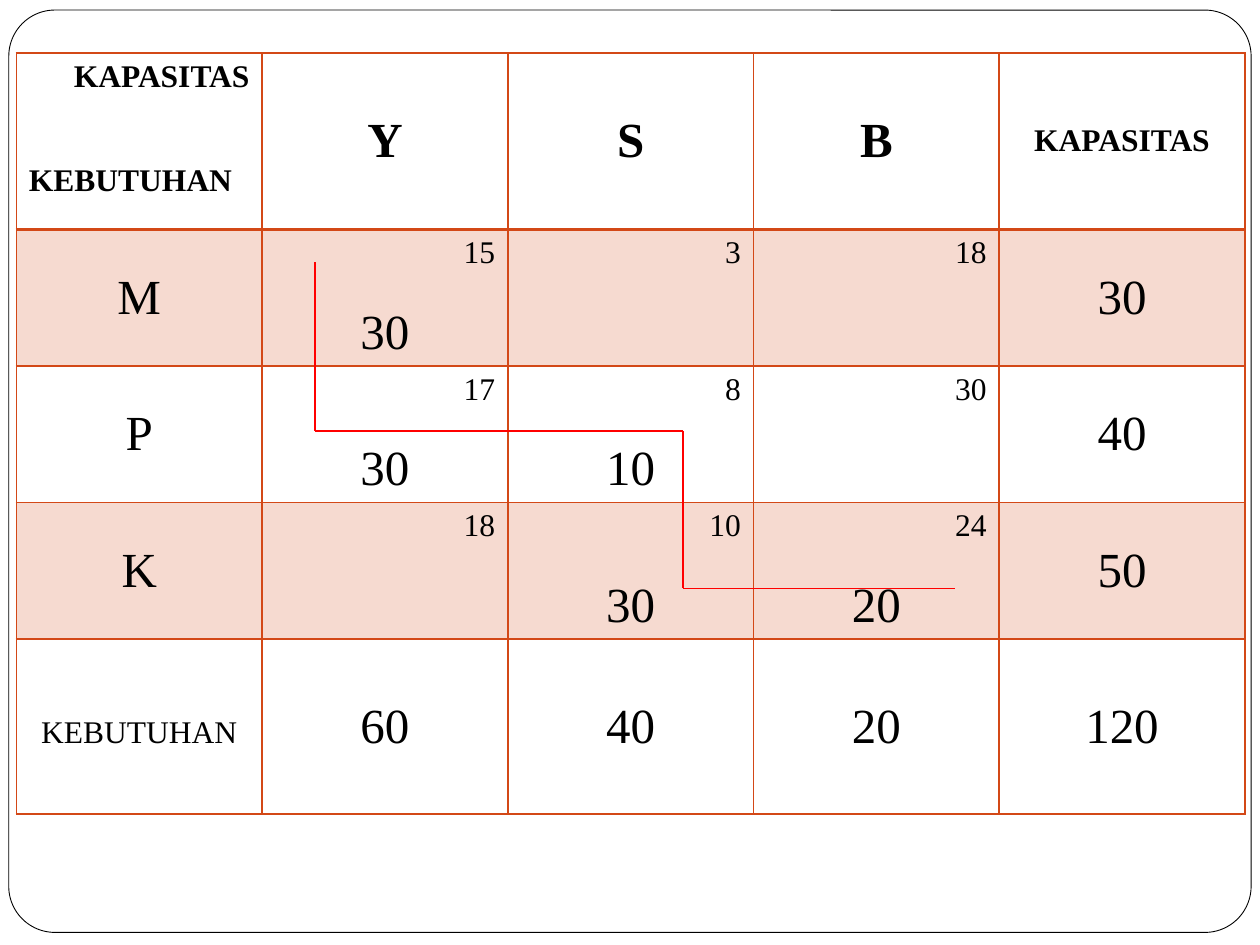
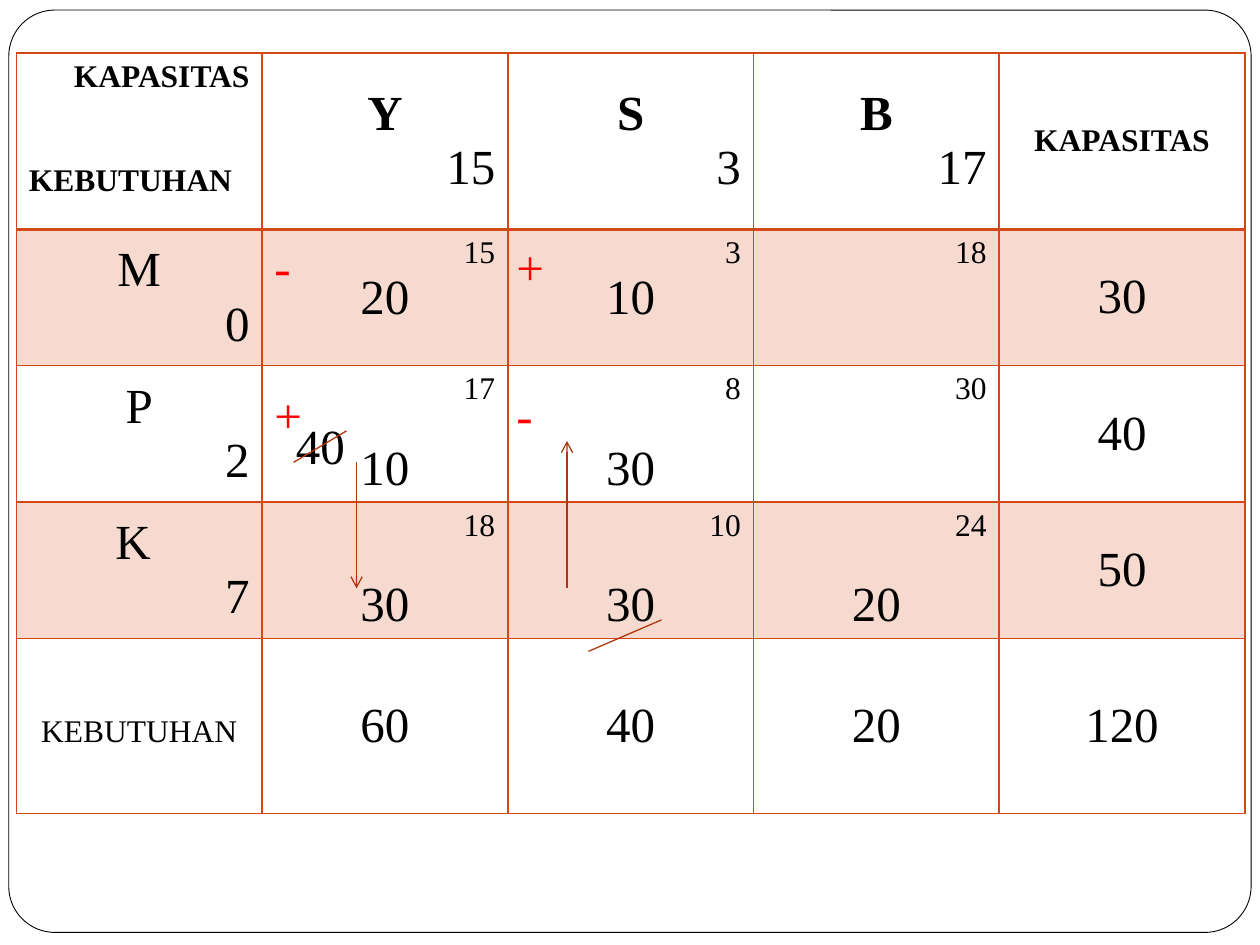
from lxml import etree
from pptx import Presentation
from pptx.dml.color import RGBColor
from pptx.enum.shapes import MSO_CONNECTOR, MSO_SHAPE
from pptx.enum.text import MSO_ANCHOR, MSO_AUTO_SIZE, PP_ALIGN
from pptx.oxml.ns import qn
from pptx.util import Inches, Pt

LEFT, CENTER, RIGHT = PP_ALIGN.LEFT, PP_ALIGN.CENTER, PP_ALIGN.RIGHT
TOP, MIDDLE = MSO_ANCHOR.TOP, MSO_ANCHOR.MIDDLE
STRAIGHT = MSO_CONNECTOR.STRAIGHT
FIT = MSO_AUTO_SIZE.SHAPE_TO_FIT_TEXT

FONT = "Times New Roman"
COLORS = {"text": "000000", "paper": "FFFFFF", "grid": "D34817",
          "path": "FF0000", "mark": "B1360B"}
SMALL, LARGE = 18, 28
LINE_GAP = 19.9  # height of one small text line, in points
COL_WIDTH = 1.95
ROW_HEIGHTS = [1.4, 1.08, 1.08, 1.08, 1.39]

SOURCES, TARGETS = "MPK", "YSB"
COSTS = [[15, 3, 18], [17, 8, 30], [18, 10, 24]]
CAPACITIES = [30, 40, 50]
DEMANDS = [60, 40, 20, 120]

# Each allocation maps (source row, target column) to its amount.
SLIDES = [
    {
        "amounts": {(0, 0): 30, (1, 0): 30, (1, 1): 10, (2, 1): 30, (2, 2): 20},
        "raised": [],
        "row_values": [],
        "col_values": [],
        "boxes": [],
        "lines": [
            (2.5, 2.08, 2.5, 3.42, "path", False),
            (2.5, 3.42, 5.42, 3.42, "path", False),
            (5.42, 3.42, 5.42, 4.67, "path", False),
            (5.42, 4.67, 7.58, 4.67, "path", False),
        ],
    },
    {
        "amounts": {(0, 0): 20, (0, 1): 10, (1, 0): 10, (1, 1): 30,
                    (2, 0): 30, (2, 1): 30, (2, 2): 20},
        "raised": [(0, 0), (0, 1)],
        "row_values": [0, 2, 7],
        "col_values": [15, 3, 17],
        "boxes": [
            ("40", 2.25, 3.25, 0.83, "text"),
            ("+", 4, 1.83, 0.5, "path"),
            ("-", 4, 3, 0.5, "path"),
            ("+", 2.08, 3, 0.5, "path"),
            ("-", 2.08, 1.83, 0.5, "path"),
        ],
        "lines": [
            (2.33, 3.67, 2.75, 3.42, "mark", False),
            (4.67, 5.17, 5.25, 4.92, "mark", False),
            (4.5, 4.67, 4.5, 3.5, "mark", True),
            (2.83, 3.67, 2.83, 4.67, "mark", True),
        ],
    },
]


def rgb(name):
    return RGBColor.from_string(COLORS[name])


def write(tf, paragraphs, color="text"):
    """Fill tf with (text, size, bold, alignment, points before) paragraphs."""
    for i, (text, size, bold, align, before) in enumerate(paragraphs):
        p = tf.add_paragraph() if i else tf.paragraphs[0]
        p.alignment = align
        p.space_before = Pt(before)
        r = p.add_run()
        r.text = str(text)
        for name, value in {"name": FONT, "size": Pt(size), "bold": bold}.items():
            setattr(r.font, name, value)
        r.font.color.rgb = rgb(color)


prs = Presentation()
prs.slide_width, prs.slide_height = Inches(10), Inches(7.5)

for plan in SLIDES:
    s = prs.slides.add_slide(prs.slide_layouts[6])

    frame = s.shapes.add_shape(MSO_SHAPE.ROUNDED_RECTANGLE, Inches(0.07),
                               Inches(0.08), Inches(9.86), Inches(7.32))
    frame.adjustments[0] = 0.05
    frame.shadow.inherit = False
    frame.fill.solid()
    frame.fill.fore_color.rgb = rgb("paper")
    frame.line.color.rgb = rgb("text")
    frame.line.width = Pt(0.5)

    # Paragraphs and anchor of every table cell, row by row
    grid = [[([("KAPASITAS", SMALL, True, RIGHT, 0),
               ("KEBUTUHAN", SMALL, True, LEFT, 2 * LINE_GAP)], TOP)]]
    for j, target in enumerate(TARGETS):
        paragraphs = [(target, LARGE, True, CENTER, 0)]
        if plan["col_values"]:
            paragraphs.append((plan["col_values"][j], LARGE, False, RIGHT, 0))
        grid[0].append((paragraphs, MIDDLE))
    grid[0].append(([("KAPASITAS", SMALL, True, CENTER, 0)], MIDDLE))

    for i, source in enumerate(SOURCES):
        paragraphs = [(source, LARGE, False, CENTER, 0)]
        if plan["row_values"]:
            label = "K " if source == "K" else source
            paragraphs = [(label, LARGE, False, CENTER, 0),
                          (plan["row_values"][i], LARGE, False, RIGHT, 0)]
        row = [(paragraphs, MIDDLE)]
        for j, cost in enumerate(COSTS[i]):
            paragraphs = [(cost, SMALL, False, RIGHT, 0)]
            if (i, j) in plan["amounts"]:
                gap = 0 if (i, j) in plan["raised"] else LINE_GAP
                paragraphs.append((plan["amounts"][i, j], LARGE, False, CENTER, gap))
            row.append((paragraphs, TOP))
        row.append(([(CAPACITIES[i], LARGE, False, CENTER, 0)], MIDDLE))
        grid.append(row)

    grid.append([([("KEBUTUHAN", SMALL, False, CENTER, 0)], TOP)]
                + [([(d, LARGE, False, CENTER, 0)], MIDDLE) for d in DEMANDS])

    shape = s.shapes.add_table(5, 5, Inches(0.13), Inches(0.42),
                               Inches(5 * COL_WIDTH), Inches(sum(ROW_HEIGHTS)))
    table = shape.table
    table.first_row = table.horz_banding = False
    for column in table.columns:
        column.width = Inches(COL_WIDTH)
    for i, row in enumerate(grid):
        table.rows[i].height = Inches(ROW_HEIGHTS[i])
        for j, (paragraphs, anchor) in enumerate(row):
            cell = table.cell(i, j)
            cell.vertical_anchor = anchor
            write(cell.text_frame, paragraphs)
            tc_pr = cell._tc.get_or_add_tcPr()
            if i in (1, 3):
                cell.fill.solid()
                cell.fill.fore_color.rgb = rgb("grid")
                tint = tc_pr.find(".//" + qn("a:srgbClr"))
                etree.SubElement(tint, qn("a:alpha"), val="20000")
            else:
                cell.fill.background()
            for k, side in enumerate("LRTB"):
                thick = (i, side) in [(0, "B"), (1, "T")]
                ln = etree.Element(qn("a:ln" + side), w=str(Pt(2 if thick else 1)))
                fill = etree.SubElement(ln, qn("a:solidFill"))
                etree.SubElement(fill, qn("a:srgbClr"), val=COLORS["grid"])
                tc_pr.insert(k, ln)
    table.cell(4, 0).margin_top = Inches(0.05 + 2 * LINE_GAP / 72)

    for text, x, y, width, color in plan["boxes"]:
        box = s.shapes.add_textbox(Inches(x), Inches(y), Inches(width), Inches(0.57))
        tf = box.text_frame
        tf.word_wrap = True
        tf.auto_size = FIT
        write(tf, [(text, LARGE, False, LEFT, 0)], color)

    for x1, y1, x2, y2, color, arrow in plan["lines"]:
        line = s.shapes.add_connector(STRAIGHT, Inches(x1), Inches(y1),
                                      Inches(x2), Inches(y2))
        line.line.color.rgb = rgb(color)
        line.line.width = Pt(0.75)
        if arrow:
            etree.SubElement(line.line._get_or_add_ln(), qn("a:tailEnd"), type="arrow")
        etree.SubElement(line._element.spPr, qn("a:effectLst"))

prs.save("out.pptx")
